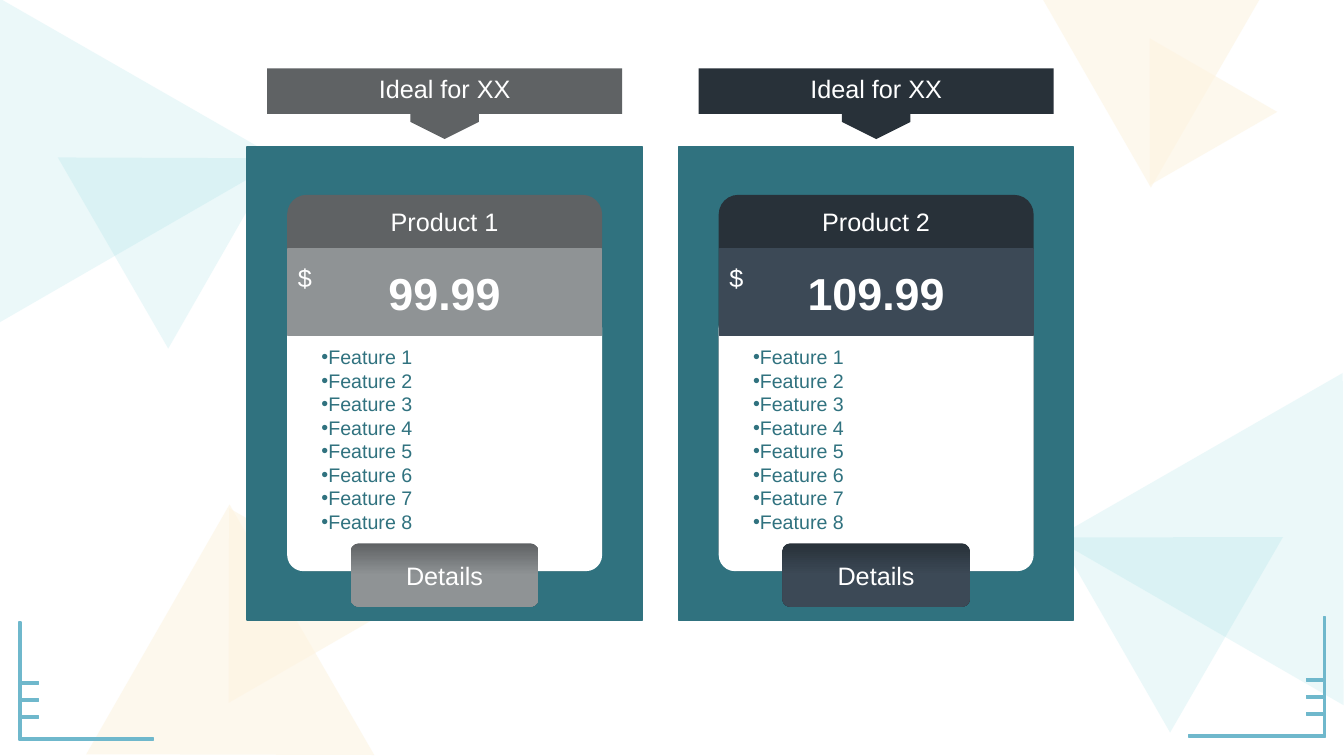
"""Build a slide with two price cards over a pale triangle backdrop."""
import pptx
import pptx.dml.color
import pptx.enum.shapes
import pptx.enum.text
import pptx.oxml
import pptx.oxml.ns
import pptx.util

RGB = pptx.dml.color.RGBColor
KIND = pptx.enum.shapes.MSO_SHAPE
ALIGN = pptx.enum.text.PP_ALIGN
ANCHOR = pptx.enum.text.MSO_ANCHOR
Inches = pptx.util.Inches
Pt = pptx.util.Pt

AQUA = RGB(0x85, 0xD8, 0xDE)
CREAM = RGB(0xFD, 0xF4, 0xE1)
SKY = RGB(0x6F, 0xB8, 0xCC)
TEAL = RGB(0x30, 0x72, 0x7F)
WHITE = RGB(0xFF, 0xFF, 0xFF)
GRAY = RGB(0x5F, 0x62, 0x64)
SILVER = RGB(0x8F, 0x93, 0x95)
NAVY = RGB(0x28, 0x31, 0x39)
SLATE = RGB(0x3C, 0x49, 0x56)

CARDS = [
    {"ideal": "Ideal for XX", "name": "Product 1", "price": "99.99", "dark": GRAY, "light": SILVER},
    {"ideal": "Ideal for XX", "name": "Product 2", "price": "109.99", "dark": NAVY, "light": SLATE},
]
ITEMS = [f"Feature {n}" for n in range(1, 9)]
COIN = "$"
BUTTON = "Details"

TRIANGLES = [
    (-0.92, -0.2, 3.23, 2.78, 330, AQUA, 16),
    (0.84, 1.1, 2.19, 1.88, 60, AQUA, 16),
    (10.95, 3.51, 3.31, 2.85, 30, AQUA, 16),
    (10.21, 4.85, 2.24, 1.93, 300, AQUA, 16),
    (0.49, 5.63, 2.87, 2.47, 240, CREAM, 60),
    (1.72, 4.93, 1.94, 1.67, 330, CREAM, 60),
    (10.07, -0.47, 2.16, 1.86, 300, CREAM, 60),
    (10.99, 0.66, 1.46, 1.26, 210, CREAM, 60),
]
RULERS = [(0.18, 7.35, 1, 1.34, 1.18), (13.16, 7.32, -1, 1.37, 1.2)]

WIDE, HIGH = 13.33, 7.5
CARD_W, CARD_H, CARD_TOP = 3.92, 4.69, 1.46
PITCH = 4.28
LEFT = 2.45
PANE_W = 3.11

deck = pptx.Presentation()
deck.slide_width, deck.slide_height = Inches(WIDE), Inches(HIGH)
slide = deck.slides.add_slide(deck.slide_layouts[6])


def xml(tag, attrs=""):
    return pptx.oxml.parse_xml(f'<a:{tag} {pptx.oxml.ns.nsdecls("a")} {attrs}/>')


def paint(shape, fill, line=None):
    shape.shadow.inherit = False
    shape.fill.solid()
    shape.fill.fore_color.rgb = fill
    if line is None:
        shape.line.fill.background()
    else:
        shape.line.color.rgb = line
        shape.line.width = Pt(1)


def block(kind, left, top, wide, high, fill, line=None, round=None):
    shape = slide.shapes.add_shape(kind, Inches(left), Inches(top), Inches(wide), Inches(high))
    if round is not None:
        shape.adjustments[0] = round
    paint(shape, fill, line)
    return shape


def outline(points, fill, line=None):
    pen = slide.shapes.build_freeform(Inches(points[0][0]), Inches(points[0][1]))
    pen.add_line_segments([(Inches(x), Inches(y)) for x, y in points[1:]], close=True)
    shape = pen.convert_to_shape()
    paint(shape, fill, line)
    return shape


def write(shape, lines, size=18, color=WHITE, bold=False, align=ALIGN.CENTER,
          anchor=ANCHOR.TOP, top=0.05, wrap=True, dots=False):
    frame = shape.text_frame
    frame.word_wrap = wrap
    frame.vertical_anchor = anchor
    frame.margin_top = Inches(top)
    for row, line in enumerate(lines):
        para = frame.add_paragraph() if row else frame.paragraphs[0]
        para.alignment = align
        run = para.add_run()
        run.text = line
        run.font.name = "Arial"
        run.font.size = Pt(size)
        run.font.bold = bold
        run.font.color.rgb = color
        if dots:
            props = para._p.get_or_add_pPr()
            props.set("marL", "0")
            props.set("indent", str(Inches(0.19)))
            props.append(xml("buFont", 'typeface="Arial"'))
            props.append(xml("buChar", 'char="•"'))


def fade(shape, share):
    tint = shape.fill._xPr.find(".//" + pptx.oxml.ns.qn("a:srgbClr"))
    tint.append(xml("alpha", f'val="{share * 1000}"'))


def ruler(edge, base, way, long, tall):
    near, far = 0.01, 0.03
    points = [(near, -tall), (far, -tall)]
    for tick in (-0.59, -0.42, -0.25):
        points += [(far, tick), (0.2, tick), (0.2, tick + 0.03), (far, tick + 0.03)]
    points += [(far, -0.03), (long, -0.03), (long, -0.01), (near, -0.01)]
    shape = outline([(edge + way * x, base + y) for x, y in points], SKY, SKY)
    shape.line._get_or_add_ln().append(xml("round"))


def ribbon(mid, color, label):
    half, stem = 1.76, 0.34
    top, low, neck, tip = 0.68, 1.13, 1.21, 1.38
    side = [(half, top), (half, low), (stem, low), (stem, neck)]
    points = [(mid + x, y) for x, y in side] + [(mid, tip)]
    points += [(mid - x, y) for x, y in reversed(side)]
    write(outline(points, color), [label])


def card(left, data):
    dark, light = data["dark"], data["light"]
    mid = left + CARD_W / 2
    pane = mid - PANE_W / 2
    box = KIND.ROUNDED_RECTANGLE
    block(box, left, CARD_TOP, CARD_W, CARD_H, TEAL, TEAL, 0)
    head = block(box, pane, 1.94, PANE_W, 3.72, dark, dark, 0.06)
    write(head, [data["name"]])
    body = block(box, pane, 3.1, PANE_W, 2.56, WHITE, WHITE, 0.06)
    write(body, ITEMS, size=14, color=TEAL, align=ALIGN.LEFT, top=0.28, dots=True)
    band = block(box, pane, 2.47, PANE_W, 0.86, light, light, 0)
    write(band, [data["price"]], size=32, bold=True, anchor=ANCHOR.MIDDLE)
    key = block(box, mid - 0.93, 5.39, 1.86, 0.63, dark, round=0.126)
    key.fill.gradient()
    key.fill.gradient_angle = 270
    for stop, place, color in zip(key.fill.gradient_stops, (0, 0.5), (dark, light)):
        stop.position = place
        stop.color.rgb = color
    write(key, [BUTTON], anchor=ANCHOR.MIDDLE)
    coin = slide.shapes.add_textbox(Inches(pane), Inches(2.55), Inches(0.45), Inches(0.4))
    write(coin, [COIN], align=ALIGN.LEFT, wrap=False)


def main():
    for left, top, wide, high, turn, color, share in TRIANGLES:
        shape = block(KIND.ISOSCELES_TRIANGLE, left, top, wide, high, color)
        shape.rotation = turn
        fade(shape, share)
    for mark in RULERS:
        ruler(*mark)
    for col, data in enumerate(CARDS):
        card(LEFT + col * PITCH, data)
    for col, data in enumerate(CARDS):
        ribbon(LEFT + col * PITCH + CARD_W / 2, data["dark"], data["ideal"])
    deck.save("out.pptx")


if __name__ == "__main__":
    main()
